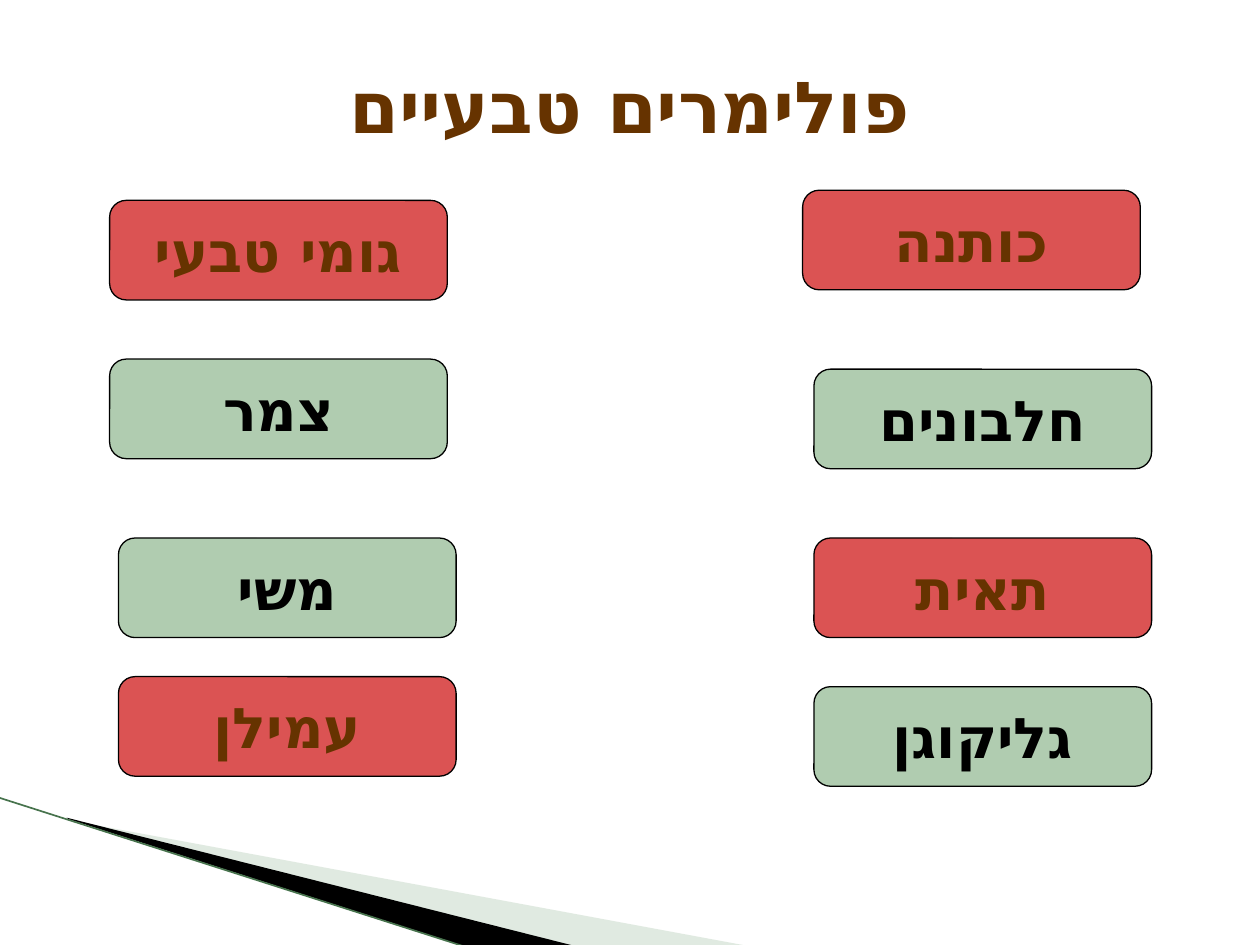
import pptx
import pptx.dml.color
import pptx.enum.shapes
import pptx.enum.text
import pptx.oxml
import pptx.oxml.ns
import pptx.util
from pptx.util import Inches

RGBColor = pptx.dml.color.RGBColor
BLACK = RGBColor(0x00, 0x00, 0x00)
BROWN = RGBColor(0x66, 0x33, 0x00)
RED = RGBColor(0xDB, 0x53, 0x53)
GREEN = RGBColor(0xB0, 0xCC, 0xB0)
PALE_GREEN = RGBColor(0xB3, 0xCB, 0xB5)
LINE_GREEN = RGBColor(0x47, 0x73, 0x4D)
FONT = "DejaVu Sans Mono"
HEBREW_FONT = "DejaVu Sans"

TITLE = "פולימרים טבעיים"
RED_STYLE = (RED, BROWN)
GREEN_STYLE = (GREEN, BLACK)
POLYMERS = [  # text, left, top, (fill, text colour)
    ("כותנה", 6.37, 1.51, RED_STYLE),
    ("חלבונים", 6.46, 2.93, GREEN_STYLE),
    ("תאית", 6.46, 4.27, RED_STYLE),
    ("גומי טבעי", 0.87, 1.59, RED_STYLE),
    ("משי", 0.94, 4.27, GREEN_STYLE),
    ("צמר", 0.87, 2.85, GREEN_STYLE),
    ("גליקוגן", 6.46, 5.45, GREEN_STYLE),
    ("עמילן", 0.94, 5.37, RED_STYLE),
]
BOX_WIDTH, BOX_HEIGHT = 2.68, 0.79
WEDGES = [  # outline, colour, opacity in percent
    ([(0.55, 6.51), (5.95, 7.51), (4.56, 7.51), (0.55, 6.5)], PALE_GREEN, 40),
    ([(0.53, 6.49), (4.57, 7.51), (3.72, 7.52), (0.54, 6.5)], BLACK, 100),
]
EDGE_LINE = (-0.01, 6.33, 3.71, 7.52)


def add_child(parent, tag, **attributes):
    child = pptx.oxml.parse_xml(f"<{tag} {pptx.oxml.ns.nsdecls('a')}/>")
    for name, value in attributes.items():
        child.set(name, value)
    parent.append(child)


def write_hebrew(shape, text, size, color):
    """Write one centred, bold, right-to-left paragraph."""
    frame = shape.text_frame
    frame.text = text
    frame.vertical_anchor = pptx.enum.text.MSO_ANCHOR.MIDDLE
    paragraph = frame.paragraphs[0]
    paragraph.alignment = pptx.enum.text.PP_ALIGN.CENTER
    paragraph._p.get_or_add_pPr().set("rtl", "1")
    run = paragraph.runs[0]
    run.font.name = FONT
    run.font.size = pptx.util.Pt(size)
    run.font.bold = True
    run.font.color.rgb = color
    add_child(run._r.get_or_add_rPr(), "a:cs", typeface=HEBREW_FONT)


def add_wedge(slide, points, color, opacity):
    corners = [(Inches(x), Inches(y)) for x, y in points]
    builder = slide.shapes.build_freeform(*corners[0])
    builder.add_line_segments(corners[1:], close=True)
    wedge = builder.convert_to_shape()
    wedge.shadow.inherit = False
    wedge.fill.solid()
    wedge.fill.fore_color.rgb = color
    wedge.line.fill.background()
    if opacity < 100:
        fill_color = wedge._element.spPr.find(".//" + pptx.oxml.ns.qn("a:srgbClr"))
        add_child(fill_color, "a:alpha", val=str(opacity * 1000))


def add_polymer(slide, text, left, top, style):
    fill_color, text_color = style
    box = slide.shapes.add_shape(
        pptx.enum.shapes.MSO_SHAPE.ROUNDED_RECTANGLE,
        Inches(left), Inches(top), Inches(BOX_WIDTH), Inches(BOX_HEIGHT))
    box.shadow.inherit = False
    box.fill.solid()
    box.fill.fore_color.rgb = fill_color
    box.line.color.rgb = BLACK
    box.line.width = pptx.util.Pt(0.75)
    write_hebrew(box, text, 32, text_color)
    box.text_frame.word_wrap = False


def main():
    presentation = pptx.Presentation()
    presentation.slide_width = Inches(10)
    presentation.slide_height = Inches(7.5)
    slide = presentation.slides.add_slide(presentation.slide_layouts[5])

    for wedge in WEDGES:
        add_wedge(slide, *wedge)
    edge = slide.shapes.add_connector(
        pptx.enum.shapes.MSO_CONNECTOR.STRAIGHT, *map(Inches, EDGE_LINE))
    edge.line.color.rgb = LINE_GREEN
    edge.line.width = pptx.util.Pt(0.95)
    add_child(edge._element.spPr, "a:effectLst")

    title = slide.shapes.title
    title.left, title.top = Inches(0.5), Inches(0.21)
    title.width, title.height = Inches(9), Inches(1.25)
    write_hebrew(title, TITLE, 41, BROWN)

    for polymer in POLYMERS:
        add_polymer(slide, *polymer)
    presentation.save("out.pptx")


if __name__ == "__main__":
    main()
